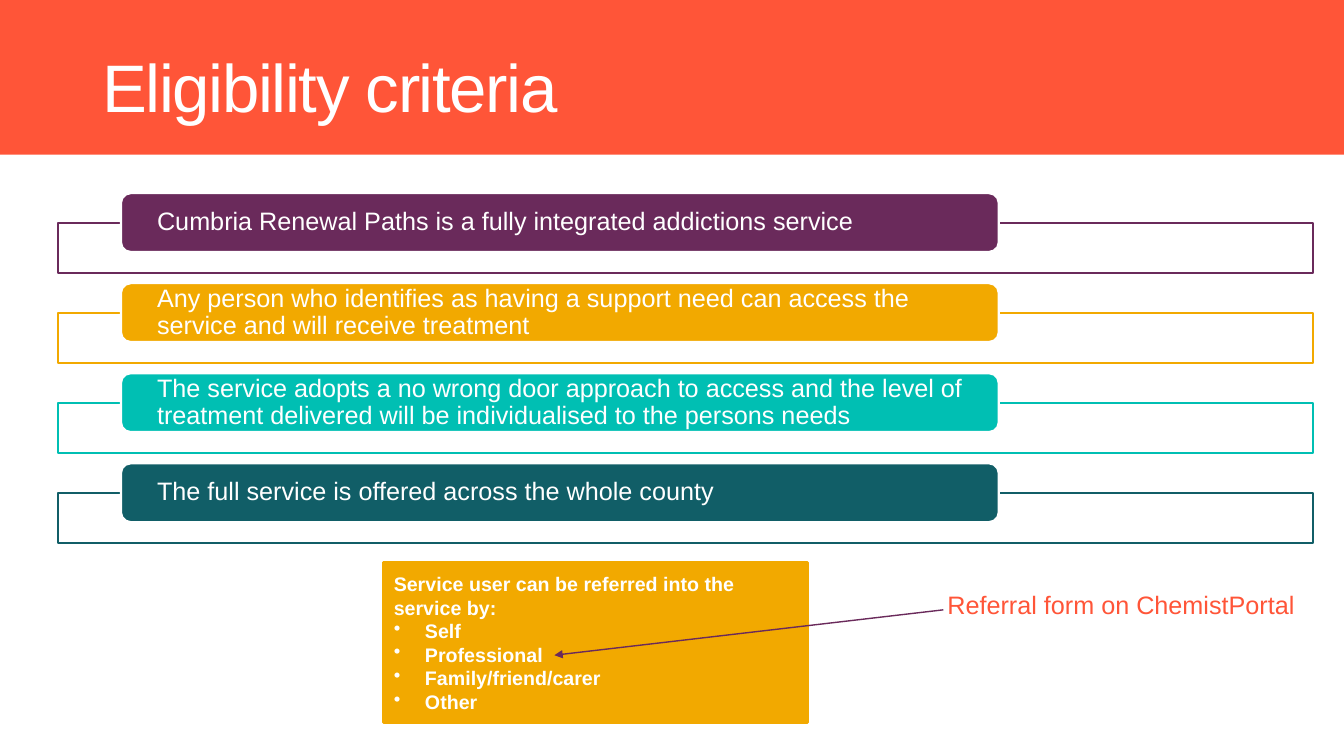
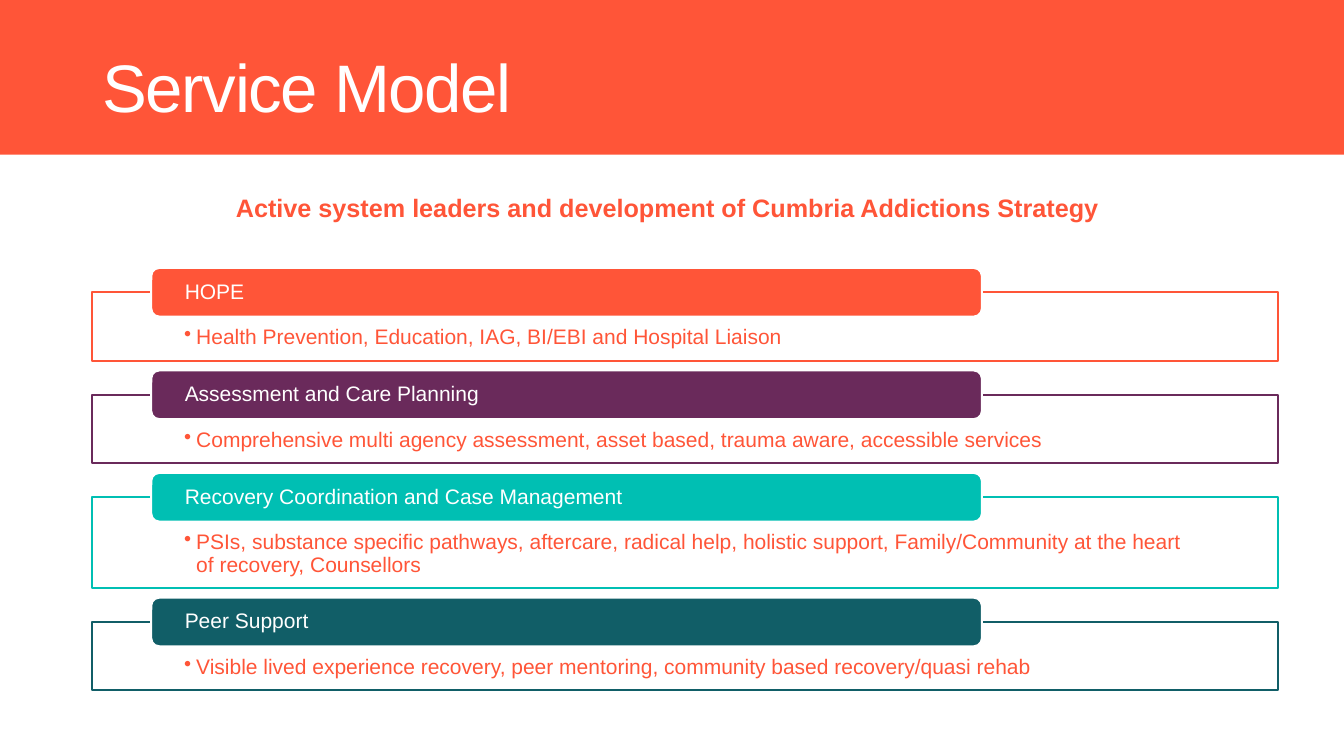
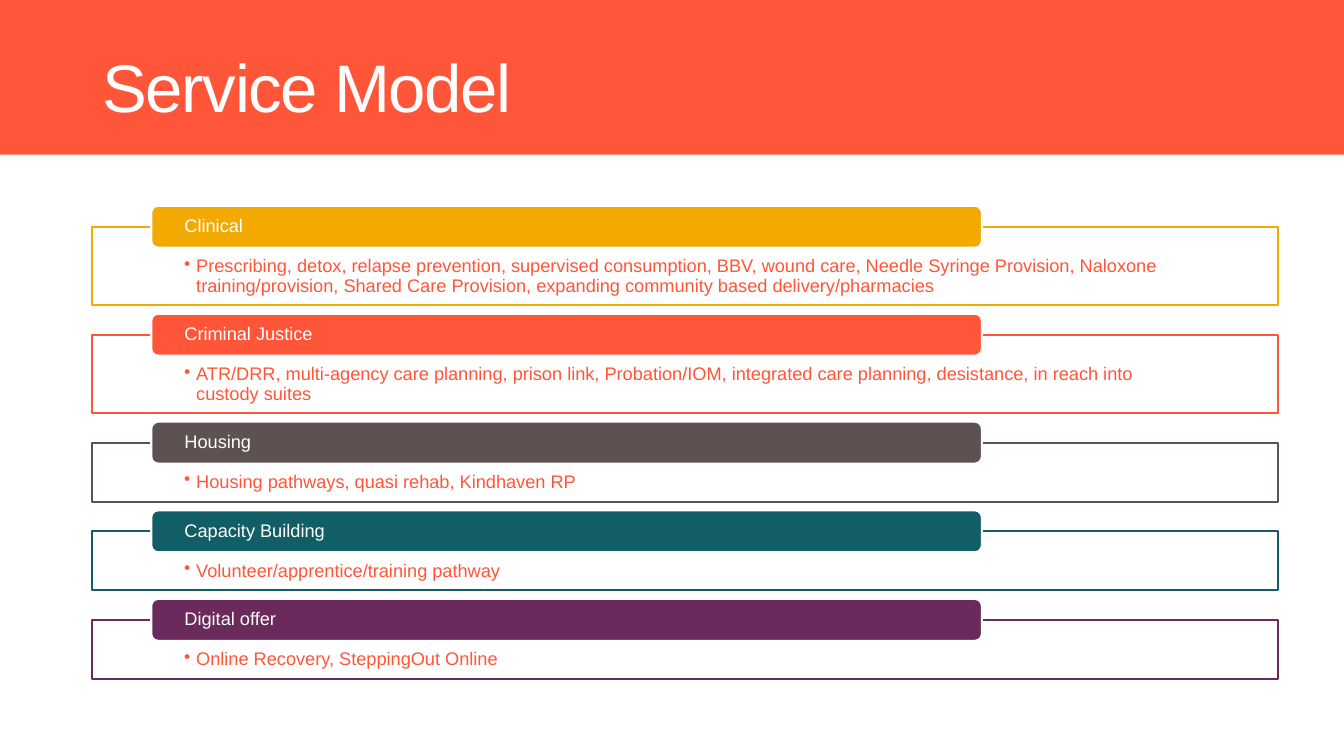
import pptx
import pptx.dml.color
import pptx.enum.dml
import pptx.enum.shapes
import pptx.enum.text
import pptx.oxml
import pptx.oxml.ns
import pptx.util
import lxml.etree

COLUMNS, ROWS = 160, 90
FONT = "Arial"
COLOURS = {
    "white": "FFFFFF",
    "orange": "FF5538",
    "purple": "6A2A5B",
    "amber": "F2A900",
    "teal": "00BFB3",
    "petrol": "115E67",
    "brown": "5D5152",
}
SHAPES = pptx.enum.shapes.MSO_SHAPE
ANCHORS = pptx.enum.text.MSO_ANCHOR


def add_xml(parent, tag, **attributes):
    return lxml.etree.SubElement(parent, pptx.oxml.ns.qn(tag), **attributes)


def colour(name):
    return pptx.dml.color.RGBColor.from_string(COLOURS[name])


class Deck:
    def __init__(self):
        self.presentation = pptx.Presentation()
        self.presentation.slide_width = pptx.util.Inches(13.333)
        self.presentation.slide_height = pptx.util.Inches(7.5)
        self.layout = self.presentation.slide_layouts.get_by_name("Title Only")
        self.slide = None

    def x(self, columns):
        return round(self.presentation.slide_width * columns / COLUMNS)

    def y(self, rows):
        return round(self.presentation.slide_height * rows / ROWS)

    def area(self, left, top, width, height):
        return self.x(left), self.y(top), self.x(width), self.y(height)

    def add_slide(self, title):
        first = self.slide is None
        self.slide = self.presentation.slides.add_slide(self.layout)
        if first:
            band = self.shape(SHAPES.RECTANGLE, (0, 0, COLUMNS, 18.4), "orange")
            self.layout.shapes.element.insert(2, band.element)
        placeholder = self.slide.shapes.title
        (placeholder.left, placeholder.top,
         placeholder.width, placeholder.height) = self.area(11, 3.2, 141.1, 15.1)
        self.set_text(placeholder, [title], 48, "white", spacing=0.9)
        paragraph = placeholder.text_frame.paragraphs[0]
        paragraph.font._element.set("spc", "-100")

    def shape(self, kind, area, fill, line=None, weight=1.5, opacity=None):
        shape = self.slide.shapes.add_shape(kind, *self.area(*area))
        shape.shadow.inherit = False
        shape.fill.solid()
        shape.fill.fore_color.rgb = colour(fill)
        if opacity:
            fill_colour = shape.element.spPr.find(".//" + pptx.oxml.ns.qn("a:srgbClr"))
            add_xml(fill_colour, "a:alpha", val=str(opacity * 1000))
        if line:
            shape.line.color.rgb = colour(line)
            shape.line.width = pptx.util.Pt(weight)
        else:
            shape.line.fill.background()
        return shape

    def set_text(self, shape, lines, size, text_colour, bold=False, spacing=1.0,
                 anchor=ANCHORS.MIDDLE, insets=(0.1, 0.05, 0.1, 0.05),
                 bullets_from=None, indent=0.12):
        frame = shape.text_frame
        frame.word_wrap = True
        frame.auto_size = pptx.enum.text.MSO_AUTO_SIZE.NONE
        frame.vertical_anchor = anchor
        (frame.margin_left, frame.margin_top,
         frame.margin_right, frame.margin_bottom) = map(pptx.util.Inches, insets)
        for index, line in enumerate(lines):
            paragraph = frame.add_paragraph() if index else frame.paragraphs[0]
            paragraph.text = line
            paragraph.alignment = pptx.enum.text.PP_ALIGN.LEFT
            paragraph.line_spacing = spacing
            if bullets_from is not None and index >= bullets_from:
                properties = paragraph._p.get_or_add_pPr()
                margin = pptx.util.Inches(indent)
                properties.set("marL", str(margin))
                properties.set("indent", str(-margin))
                add_xml(properties, "a:buChar", char="•")
            paragraph.font.name = FONT
            paragraph.font.size = pptx.util.Pt(size)
            paragraph.font.bold = bold
            paragraph.font.color.rgb = colour(text_colour)

    def label(self, area, text, bold=False):
        box = self.slide.shapes.add_textbox(*self.area(*area))
        self.set_text(box, [text], 18, "orange", bold, anchor=ANCHORS.TOP)

    def arrow(self, start, end, line_colour):
        connector = self.slide.shapes.add_connector(
            pptx.enum.shapes.MSO_CONNECTOR.STRAIGHT,
            self.x(start[0]), self.y(start[1]), self.x(end[0]), self.y(end[1]))
        connector.line.color.rgb = colour(line_colour)
        connector.line.width = pptx.util.Pt(1)
        add_xml(connector.line._get_or_add_ln(), "a:tailEnd", type="triangle")
        add_xml(connector.element.spPr, "a:effectLst")

    def tabbed_list(self, entries, top, frame_left, frame_width, tab_left, tab_width,
                    tab_height, gap, heights, size, tab_inset, frame_insets=None):
        for fill, heading, detail, line_count in entries:
            height = heights[line_count]
            frame = self.shape(SHAPES.RECTANGLE, (frame_left, top, frame_width, height),
                               "white", fill, opacity=90)
            if detail:
                self.set_text(frame, [detail], size, "orange", spacing=0.9,
                              anchor=ANCHORS.TOP, insets=frame_insets, bullets_from=0)
            tab = self.shape(SHAPES.ROUNDED_RECTANGLE,
                             (tab_left, top - tab_height / 2, tab_width, tab_height),
                             fill, "white")
            self.set_text(tab, [heading], size, "white", spacing=0.9,
                          insets=(tab_inset, 0, tab_inset, 0))
            top += height + gap


def eligibility_slide(deck):
    deck.add_slide("Eligibility criteria")
    criteria = [
        ("purple", "Cumbria Renewal Paths is a fully integrated addictions service"),
        ("amber", "Any person who identifies as having a support need can access the "
                  "service and will receive treatment"),
        ("teal", "The service adopts a no wrong door approach to access and the level of "
                 "treatment delivered will be individualised to the persons needs"),
        ("petrol", "The full service is offered across the whole county"),
    ]
    deck.tabbed_list([(fill, text, None, 0) for fill, text in criteria],
                     top=26.5, frame_left=6.9, frame_width=149.4,
                     tab_left=14.4, tab_width=104.5, tab_height=7,
                     gap=4.72, heights=[6], size=18, tab_inset=0.33)
    referral = deck.shape(SHAPES.RECTANGLE, (45.7, 67, 50.4, 19), "amber", "amber", 2.25)
    deck.set_text(referral,
                  ["Service user can be referred into the service by:",
                   "Self", "Professional", "Family/friend/carer", "Other"],
                  14, "white", bold=True, bullets_from=1, indent=0.31)
    deck.arrow((112.3, 72.6), (66, 78), "purple")
    deck.label((111.6, 69.6, 47.9, 4.8), "Referral form on ChemistPortal")


def service_model_slide(deck, entries, **measures):
    deck.add_slide("Service Model")
    deck.tabbed_list(entries, frame_left=11, frame_width=141.1,
                     tab_left=18, tab_width=98.9, tab_inset=0.31, **measures)


def main():
    deck = Deck()
    eligibility_slide(deck)
    service_model_slide(deck, [
        ("orange", "HOPE",
         "Health Prevention, Education, IAG, BI/EBI and Hospital Liaison", 1),
        ("purple", "Assessment and Care Planning",
         "Comprehensive multi agency assessment, asset based, trauma aware, "
         "accessible services", 1),
        ("teal", "Recovery Coordination and Case Management",
         "PSIs, substance specific pathways, aftercare, radical help, holistic support, "
         "Family/Community at the heart of recovery, Counsellors", 2),
        ("petrol", "Peer Support",
         "Visible lived experience recovery, peer mentoring, community based "
         "recovery/quasi rehab", 1),
    ], top=34.8, tab_height=5.8, gap=4.05, heights={1: 8.15, 2: 10.8}, size=15,
        frame_insets=(0.91, 0.34, 0.91, 0.12))
    deck.label((26.9, 22.3, 106.2, 4.8),
               "Active system leaders and development of Cumbria Addictions Strategy", True)
    service_model_slide(deck, [
        ("amber", "Clinical",
         "Prescribing, detox, relapse prevention, supervised consumption, BBV, wound care, "
         "Needle Syringe Provision, Naloxone training/provision, Shared Care Provision, "
         "expanding community based delivery/pharmacies", 2),
        ("orange", "Criminal Justice",
         "ATR/DRR, multi-agency care planning, prison link, Probation/IOM, integrated care "
         "planning, desistance, in reach into custody suites", 2),
        ("brown", "Housing", "Housing pathways, quasi rehab, Kindhaven RP", 1),
        ("petrol", "Capacity Building", "Volunteer/apprentice/training pathway", 1),
        ("purple", "Digital offer", "Online Recovery, SteppingOut Online", 1),
    ], top=27, tab_height=5, gap=3.5, heights={1: 7.05, 2: 9.35}, size=13,
        frame_insets=(0.91, 0.3, 0.91, 0.1))
    deck.presentation.save("out.pptx")


if __name__ == "__main__":
    main()
